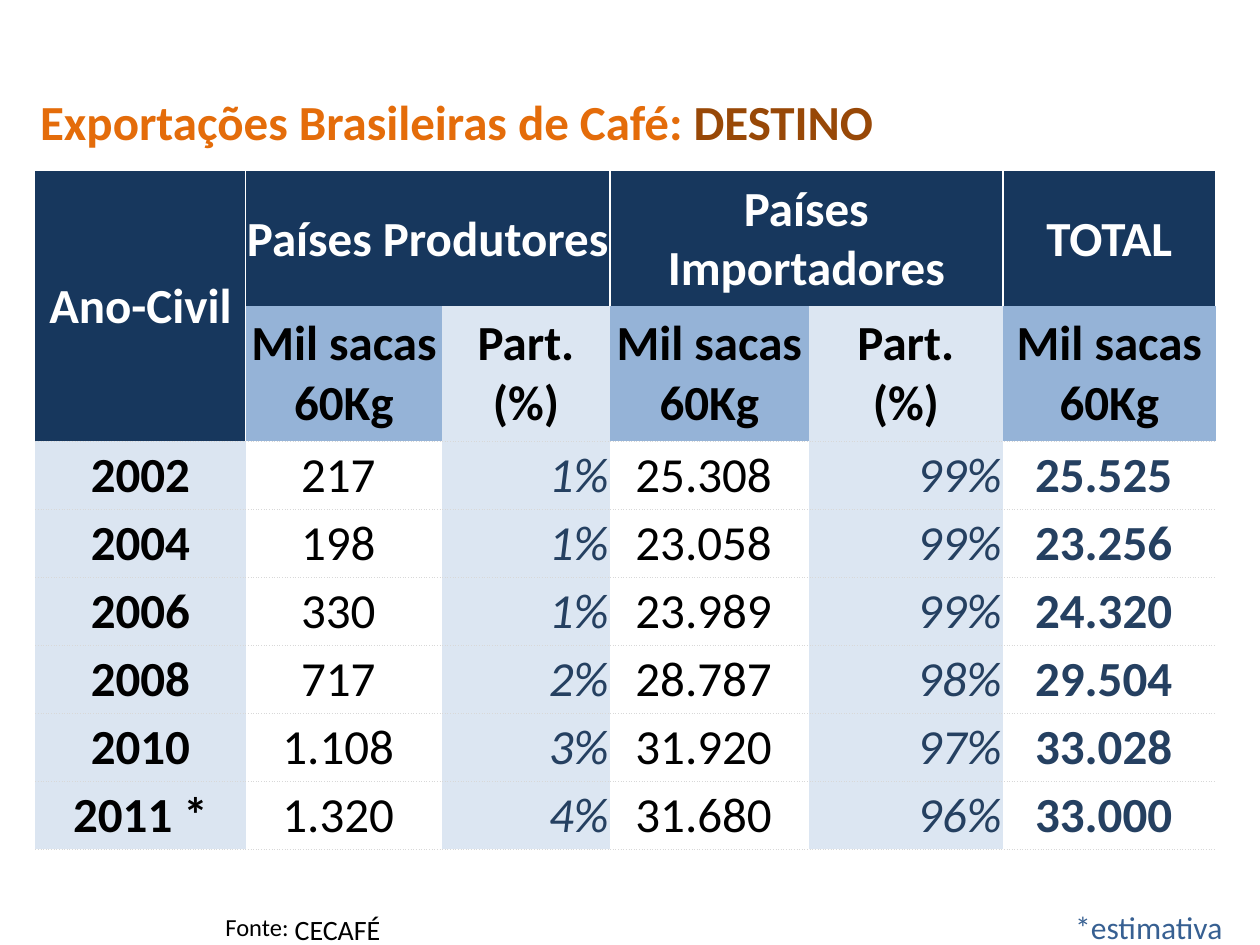
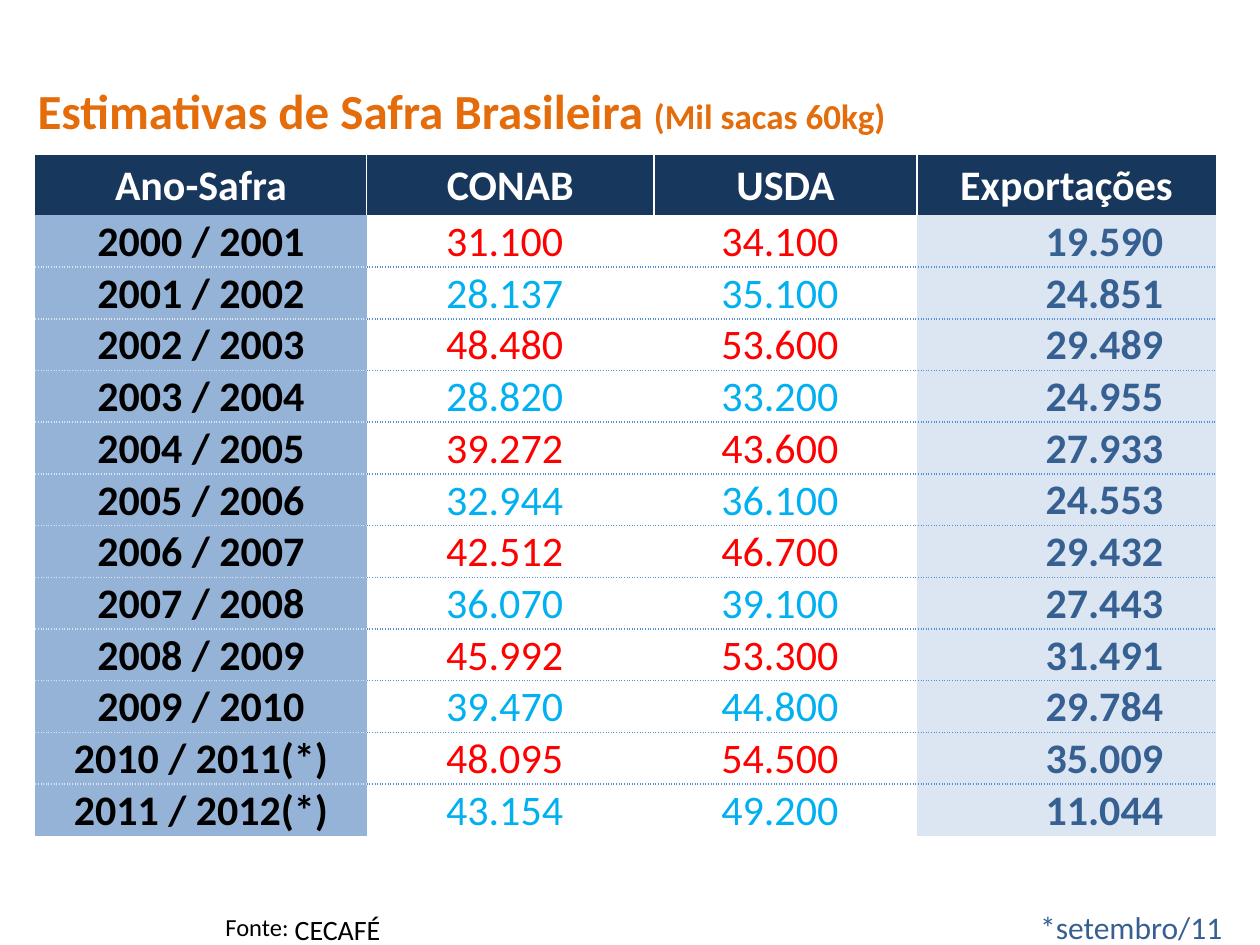
from lxml import etree
from pptx import Presentation, util as u
from pptx.dml.color import RGBColor
from pptx.enum import text
from pptx.oxml.ns import qn

COLORS = {
    "white": "FFFFFF", "black": "000000", "orange": "E46C0A", "brown": "984807",
    "navy": "17375D", "mid_blue": "95B3D7", "pale": "DCE6F2", "pale_year": "DBE5F1",
    "ink": "254061", "steel": "376092", "red": "FF0000", "sky": "00B0F0",
    "gray": "D8D8D8", "line_blue": "558ED5",
}
FONT = "Calibri"
COLUMNS, ROWS = 100, 75
PLAIN_TABLE_STYLE = "{2D5ABB26-0587-4C30-8999-92F81FD0307C}"
CENTER, RIGHT = text.PP_ALIGN.CENTER, text.PP_ALIGN.RIGHT

# Cell styles; left and right are extra padding in grid columns.
HEADER = {"fill": "navy", "color": "white", "bold": True}
SACKS = {"fill": "mid_blue", "bold": True}
SHARE_HEADER = {"fill": "pale", "bold": True}
YEAR = {"fill": "pale_year", "bold": True}
NUMBER = {"right": 0.9}
SHARE = {"fill": "pale", "color": "ink", "italic": True, "align": RIGHT}
TOTAL = {"color": "ink", "bold": True, "right": 0.9}
EXPORTS = {"fill": "pale", "color": "steel", "bold": True, "left": 6,
           "anchor": text.MSO_ANCHOR.BOTTOM}


class Deck:
    def __init__(self):
        self.presentation = Presentation()
        self.presentation.slide_width = u.Inches(10)
        self.presentation.slide_height = u.Inches(7.5)
        self.slide = None

    def x(self, columns):
        return u.Emu(round(self.presentation.slide_width * columns / COLUMNS))

    def y(self, rows):
        return u.Emu(round(self.presentation.slide_height * rows / ROWS))

    def box(self, left, top, width, height):
        return self.x(left), self.y(top), self.x(width), self.y(height)

    def format_run(self, run, size, color, bold=False, italic=False):
        values = {"name": FONT, "size": u.Pt(size), "bold": bold, "italic": italic}
        for name, value in values.items():
            setattr(run.font, name, value)
        run.font.color.rgb = RGBColor.from_string(COLORS[color])

    def label(self, place, runs, bold=False, align=None, wrap=False):
        """Add a text box; runs is a list of (words, size, color)."""
        frame = self.slide.shapes.add_textbox(*self.box(*place)).text_frame
        frame.word_wrap = wrap
        frame.auto_size = text.MSO_AUTO_SIZE.SHAPE_TO_FIT_TEXT
        paragraph = frame.paragraphs[0]
        paragraph.alignment = align
        for words, size, color in runs:
            run = paragraph.add_run()
            run.text = words
            self.format_run(run, size, color, bold)

    def start_slide(self, title_place, title_runs, note):
        self.slide = self.presentation.slides.add_slide(
            self.presentation.slide_layouts[6])
        self.label((16.9, 71.9, 7.1, 3.4), [("Fonte:", 14, "black")])
        self.label((22.4, 71.9, 8.9, 3.7), [("CECAFÉ", 16, "black")])
        self.label((62.6, 71.6, 35.4, 4), [(note, 18, "steel")],
                   align=RIGHT, wrap=True)
        self.label(title_place, title_runs, bold=True)

    def table(self, left, top, widths, heights):
        place = self.box(left, top, sum(widths), sum(heights))
        table = self.slide.shapes.add_table(
            len(heights), len(widths), *place).table
        table.first_row = table.horz_banding = False
        table._tbl.tblPr.find(qn("a:tableStyleId")).text = PLAIN_TABLE_STYLE
        for column, width in zip(table.columns, widths):
            column.width = self.x(width)
        for row, height in zip(table.rows, heights):
            row.height = self.y(height)
        return table

    def border(self, cell, side, color, width, dash):
        line = etree.SubElement(cell._tc.get_or_add_tcPr(), qn("a:ln" + side),
                                w=str(u.Pt(width)))
        fill = etree.SubElement(line, qn("a:solidFill"))
        etree.SubElement(fill, qn("a:srgbClr"), val=COLORS[color])
        etree.SubElement(line, qn("a:prstDash"), val=dash)

    def cell(self, cell, words, size, style, borders):
        """Fill one cell; borders maps sides, in L R T B order, to lines."""
        layout = {
            "margin_left": self.x(0.1 + style.get("left", 0)),
            "margin_right": self.x(0.1 + style.get("right", 0)),
            "margin_top": self.y(0.1), "margin_bottom": 0,
            "vertical_anchor": style.get("anchor", text.MSO_ANCHOR.MIDDLE),
        }
        for name, value in layout.items():
            setattr(cell, name, value)
        paragraph = cell.text_frame.paragraphs[0]
        paragraph.text = words
        paragraph.alignment = style.get("align", CENTER)
        for run in paragraph.runs:
            self.format_run(run, size, style.get("color", "black"),
                            style.get("bold", False), style.get("italic", False))
        for side, line in borders.items():
            self.border(cell, side, *line)
        if "fill" in style:
            cell.fill.solid()
            cell.fill.fore_color.rgb = RGBColor.from_string(COLORS[style["fill"]])
        else:
            cell.fill.background()

    def header_row(self, table, names, size):
        """Write the dark first row, with white lines between its cells."""
        white, last = ("white", 1, "solid"), len(names) - 1
        for index, name in enumerate(names):
            borders = {}
            if index > 0:
                borders["L"] = white
            if index < last:
                borders["R"] = white
            self.cell(table.cell(0, index), name, size, HEADER, borders)


def destination_slide(deck):
    deck.start_slide((2.2, 6.8, 68.9, 5.7),
                     [("Exportações Brasileiras de Café: ", 28, "orange"),
                      ("DESTINO", 28, "brown")], "*estimativa")
    years = [
        ("2002", "217", "1%", "25.308", "99%", "25.525"),
        ("2004", "198", "1%", "23.058", "99%", "23.256"),
        ("2006", "330", "1%", "23.989", "99%", "24.320"),
        ("2008", "717", "2%", "28.787", "98%", "29.504"),
        ("2010", "1.108", "3%", "31.920", "97%", "33.028"),
        ("2011 *", "1.320", "4%", "31.680", "96%", "33.000"),
    ]
    table = deck.table(2.8, 13.6, [16.7, 15.6, 13.3, 15.8, 15.4, 16.9],
                       [10.7] * 2 + [5.4] * len(years))
    for first, end in [((0, 0), (1, 0)), ((0, 1), (0, 2)), ((0, 3), (0, 4))]:
        table.cell(*first).merge(table.cell(*end))
    deck.header_row(table, ["Ano-Civil", "Países Produtores", "",
                            "Países Importadores", "", "TOTAL"], 28)

    sacks, share = ("Mil sacas 60Kg", SACKS), ("Part.\n(%)", SHARE_HEADER)
    for column, (words, style) in enumerate([sacks, share, sacks, share, sacks], 1):
        deck.cell(table.cell(1, column), words, 28, style, {})

    dotted = ("gray", 0.5, "dot")
    styles = [YEAR, NUMBER, SHARE, NUMBER, SHARE, TOTAL]
    for row, values in enumerate(years, 2):
        for column, (value, style) in enumerate(zip(values, styles)):
            deck.cell(table.cell(row, column), value, 28, style,
                      {"T": dotted, "B": dotted})


def harvest_slide(deck):
    deck.start_slide((2, 5.9, 72.4, 5.7),
                     [("Estimativas de Safra Brasileira ", 28, "orange"),
                      ("(Mil sacas 60kg)", 20, "orange")], "*setembro/11")
    harvests = [
        ("31.100", "34.100", "19.590"), ("28.137", "35.100", "24.851"),
        ("48.480", "53.600", "29.489"), ("28.820", "33.200", "24.955"),
        ("39.272", "43.600", "27.933"), ("32.944", "36.100", "24.553"),
        ("42.512", "46.700", "29.432"), ("36.070", "39.100", "27.443"),
        ("45.992", "53.300", "31.491"), ("39.470", "44.800", "29.784"),
        ("48.095", "54.500", "35.009"), ("43.154", "49.200", "11.044"),
    ]
    table = deck.table(2.8, 12.3, [26.3, 22.8, 20.9, 23.7],
                       [4.8] + [4.1] * len(harvests))
    deck.header_row(table, ["Ano-Safra", "CONAB", "USDA", "Exportações"], 24)
    for row, values in enumerate(harvests, 1):
        year = 1999 + row
        mark = "(*)" if year >= 2010 else ""
        estimate = {**NUMBER, "color": "red" if row % 2 else "sky"}
        styles = [SACKS, estimate, estimate, EXPORTS]
        words = (f"{year} / {year + 1}{mark}", *values)
        for column, (value, style) in enumerate(zip(words, styles)):
            dotted = ("line_blue" if column else "pale", 1, "sysDot")
            borders = {}
            if row > 1:
                borders["T"] = dotted
            if row < len(harvests):
                borders["B"] = dotted
            deck.cell(table.cell(row, column), value, 24, style, borders)


def main():
    deck = Deck()
    destination_slide(deck)
    harvest_slide(deck)
    deck.presentation.save("out.pptx")


if __name__ == "__main__":
    main()
